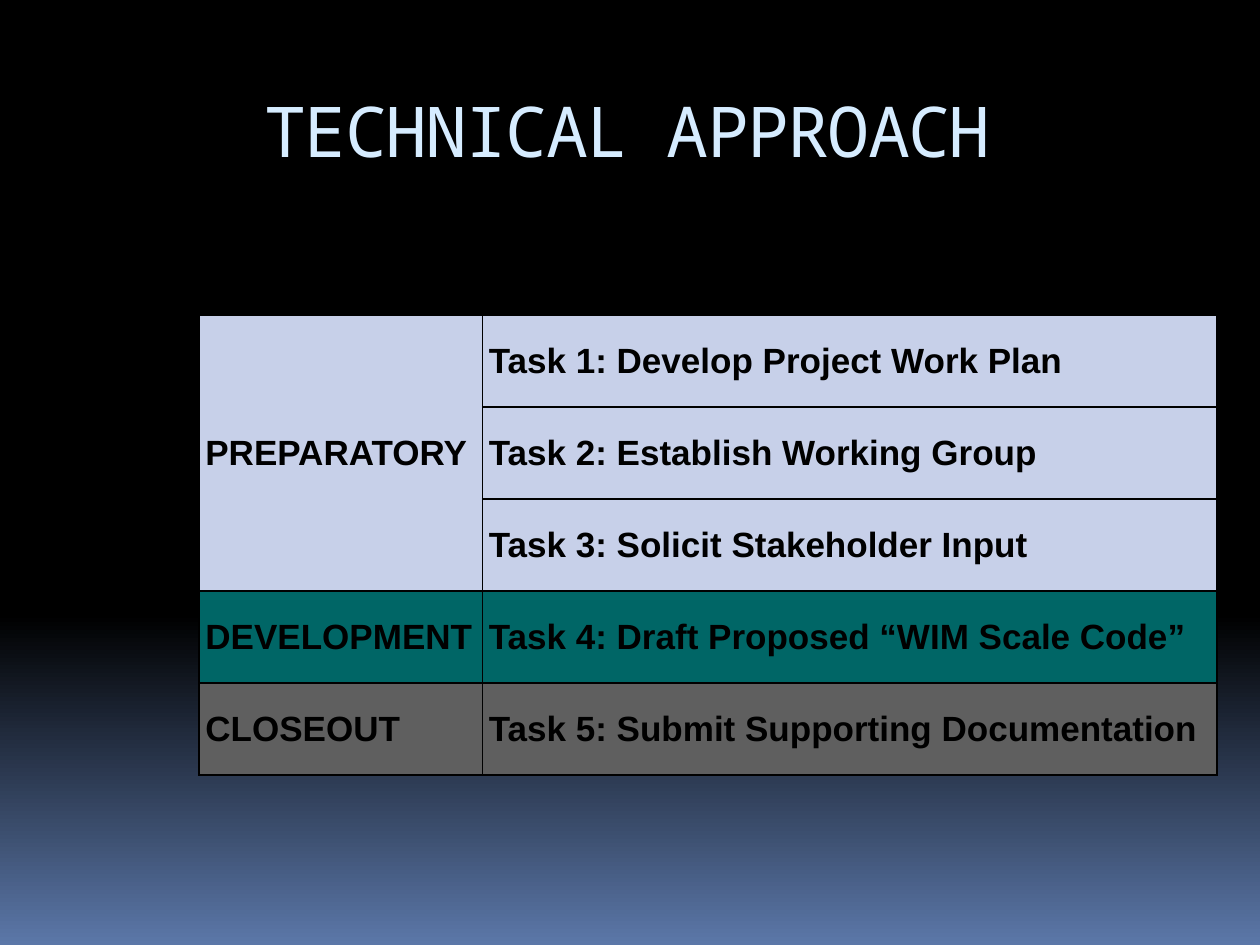
from copy import deepcopy
from dataclasses import dataclass

from pptx import Presentation
from pptx.dml.color import RGBColor
from pptx.enum.text import MSO_ANCHOR, MSO_AUTO_SIZE, PP_ALIGN
from pptx.oxml import parse_xml
from pptx.oxml.ns import nsdecls, qn
from pptx.util import Inches, Pt

BOTTOM = MSO_ANCHOR.BOTTOM
MIDDLE = MSO_ANCHOR.MIDDLE
LEFT = PP_ALIGN.LEFT
NO_AUTOFIT = MSO_AUTO_SIZE.NONE
TITLE_ONLY = 5


@dataclass(frozen=True)
class Theme:
    title_font: str = "Noto Sans Mono"
    body_font: str = "Arial"
    title_size: int = 40
    body_size: int = 20
    title: str = "D6ECFF"
    ink: str = "000000"
    preparatory: str = "C7D0E9"
    development: str = "006666"
    closeout: str = "5F5F5F"
    backdrop: tuple = ((0, "000000"), (0.65, "000000"), (1, "5B77A8"))


THEME = Theme()
PHASES = [
    ("PREPARATORY", THEME.preparatory, [
        "Task 1: Develop Project Work Plan",
        "Task 2: Establish Working Group",
        "Task 3: Solicit Stakeholder Input",
    ]),
    ("DEVELOPMENT", THEME.development, ["Task 4: Draft Proposed “WIM Scale Code”"]),
    ("CLOSEOUT", THEME.closeout, ["Task 5: Submit Supporting Documentation"]),
]
COLUMN_WIDTHS = (2.25, 5.83)
ROW_HEIGHT = 0.73


def paint_background(page):
    fill = page.background.fill
    fill.gradient()
    fill.gradient_angle = 270
    stop_list = page.element.find(".//" + qn("a:gsLst"))
    stop_list.append(deepcopy(stop_list[-1]))
    for stop, (position, color) in zip(fill.gradient_stops, THEME.backdrop):
        stop.position = position
        stop.color.rgb = RGBColor.from_string(color)


def add_span(para, text, font, size, color, bold=False):
    span = para.add_run()
    span.text = text
    span.font.name = font
    span.font.size = Pt(size)
    span.font.bold = bold
    span.font.color.rgb = RGBColor.from_string(color)
    return span


def add_title(page, text):
    box = page.shapes.title
    box.left, box.top = Inches(2), Inches(0.33)
    box.width, box.height = Inches(8), Inches(1.08)
    frame = box.text_frame
    frame.word_wrap = True
    frame.auto_size = NO_AUTOFIT
    frame.vertical_anchor = BOTTOM
    para = frame.paragraphs[0]
    para.alignment = LEFT
    span = add_span(para, text, THEME.title_font, THEME.title_size, THEME.title)
    span.font._element.set("spc", "-100")


def style_cell(cell, color):
    cell.vertical_anchor = MIDDLE
    cell.margin_left = cell.margin_right = Inches(0.05)
    cell.margin_top = cell.margin_bottom = Inches(0.05)
    properties = cell._tc.get_or_add_tcPr()
    for side in ("lnL", "lnR", "lnT", "lnB"):
        properties.append(parse_xml(
            f'<a:{side} {nsdecls("a")} w="{Pt(1)}"><a:solidFill>'
            f'<a:srgbClr val="{THEME.ink}"/></a:solidFill></a:{side}>'
        ))
    cell.fill.solid()
    cell.fill.fore_color.rgb = RGBColor.from_string(color)


def write_cell(cell, text):
    para = cell.text_frame.paragraphs[0]
    add_span(para, text, THEME.body_font, THEME.body_size, THEME.ink, bold=True)


def add_task_table(page):
    row_count = sum(len(tasks) for _, _, tasks in PHASES)
    frame = page.shapes.add_table(
        row_count, len(COLUMN_WIDTHS), Inches(1.58), Inches(2.5),
        Inches(sum(COLUMN_WIDTHS)), Inches(ROW_HEIGHT * row_count),
    )
    table = frame.table
    table.first_row = False
    table.horz_banding = False
    for column, width in zip(table.columns, COLUMN_WIDTHS):
        column.width = Inches(width)
    for row in table.rows:
        row.height = Inches(ROW_HEIGHT)

    first = 0
    for phase, color, tasks in PHASES:
        for index, task in enumerate(tasks, first):
            style_cell(table.cell(index, 0), color)
            style_cell(table.cell(index, 1), color)
            write_cell(table.cell(index, 1), task)
        write_cell(table.cell(first, 0), phase)
        if len(tasks) > 1:
            table.cell(first, 0).merge(table.cell(first + len(tasks) - 1, 0))
        first += len(tasks)


def main():
    deck = Presentation()
    deck.slide_width, deck.slide_height = Inches(10), Inches(7.5)
    page = deck.slides.add_slide(deck.slide_layouts[TITLE_ONLY])
    paint_background(page)
    add_title(page, "TECHNICAL APPROACH")
    add_task_table(page)
    deck.save("out.pptx")


if __name__ == "__main__":
    main()
